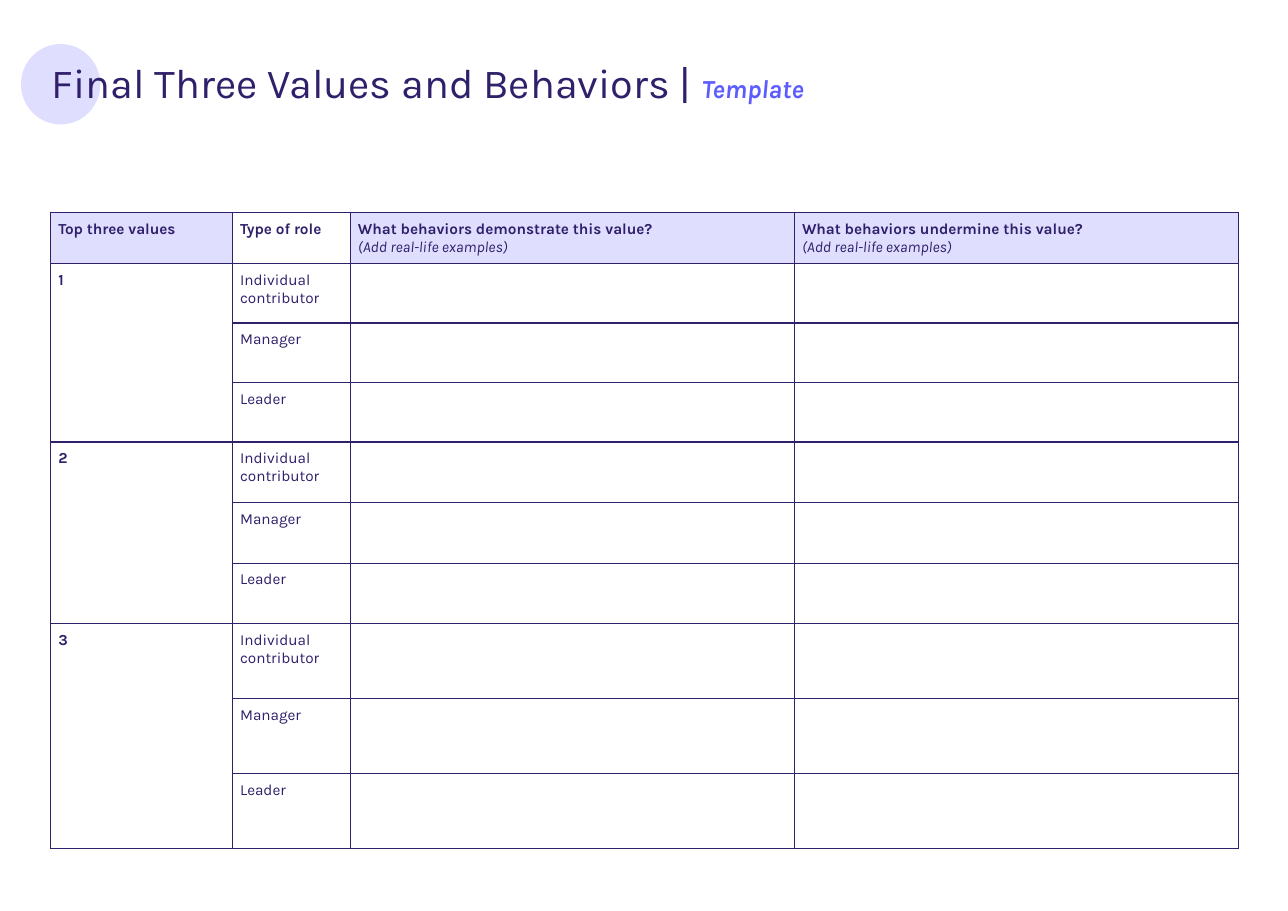
"""Build the values and behaviors template slide."""
from lxml import etree
from pptx import Presentation
from pptx.dml.color import RGBColor
from pptx.enum import shapes, text
from pptx.oxml import ns
from pptx.util import Inches, Pt

NAVY, VIOLET, LILAC, WHITE = "30206B", "5D5CFF", "DFDEFF", "FFFFFF"
TITLE = ("Final Three Values and Behaviors | ", "Template")
HINT = "(Add real-life examples)"
HEADERS = [
    ("Top three values", None, LILAC),
    ("Type of role", None, WHITE),
    ("What behaviors demonstrate this value?", HINT, LILAC),
    ("What behaviors undermine this value?", HINT, LILAC),
]
VALUES = [("1", 0.54), ("2", 0.55), ("3", 0.68)]
ROLES = ["Individual contributor", "Manager", "Leader"]
COLUMNS = [1.65, 1.07, 4.03, 4.03]
HEADER_HEIGHT = 0.46
LEFT, TOP, MARGIN = 0.46, 1.93, 0.07


def color(value):
    return RGBColor.from_string(value)


def write(p, content, size=10, fill=NAVY, bold=False, italic=False):
    r = p.add_run()
    r.text = content
    r.font.name, r.font.size = "Karla", Pt(size)
    r.font.bold, r.font.italic = bold, italic
    r.font.color.rgb = color(fill)


def add_border(cell, width=1):
    tcPr = cell._tc.get_or_add_tcPr()
    for side in ("lnL", "lnR", "lnT", "lnB"):
        ln = etree.SubElement(tcPr, ns.qn(f"a:{side}"), w=str(Pt(width)))
        solid = etree.SubElement(ln, ns.qn("a:solidFill"))
        etree.SubElement(solid, ns.qn("a:srgbClr"), val=NAVY)


def add_title(s):
    sp = s.shapes.title
    sp.left, sp.top, sp.width, sp.height = map(Inches, (0.47, 0.57, 9.1, 0.84))
    tf = sp.text_frame
    tf.margin_left = tf.margin_right = tf.margin_top = tf.margin_bottom = 0
    tf.vertical_anchor = text.MSO_ANCHOR.TOP
    tf.auto_size = text.MSO_AUTO_SIZE.NONE
    p = tf.paragraphs[0]
    p.alignment, p.line_spacing = text.PP_ALIGN.LEFT, 0.9
    write(p, TITLE[0], size=27)
    write(p, TITLE[1], size=17, fill=VIOLET, bold=True, italic=True)

    circle = s.shapes.add_shape(
        shapes.MSO_SHAPE.OVAL, *map(Inches, (0.19, 0.4, 0.72, 0.73)))
    circle.shadow.inherit = False
    circle.fill.solid()
    circle.fill.fore_color.rgb = color(LILAC)
    circle.line.fill.background()
    sp.element.addprevious(circle.element)


def add_values_table(s):
    heights = [HEADER_HEIGHT] + [h for _, h in VALUES for _ in ROLES]
    table = s.shapes.add_table(
        len(heights), len(COLUMNS), Inches(LEFT), Inches(TOP),
        Inches(sum(COLUMNS)), Inches(sum(heights))).table
    table.first_row = table.horz_banding = False
    for column, width in zip(table.columns, COLUMNS):
        column.width = Inches(width)
    for row, height in zip(table.rows, heights):
        row.height = Inches(height)
    for cell in table.iter_cells():
        cell.margin_left = cell.margin_right = Inches(MARGIN)
        cell.margin_top = cell.margin_bottom = Inches(MARGIN)
        add_border(cell)
        cell.fill.background()

    for i, (heading, hint, fill) in enumerate(HEADERS):
        cell = table.cell(0, i)
        cell.fill.solid()
        cell.fill.fore_color.rgb = color(fill)
        write(cell.text_frame.paragraphs[0], heading, bold=True)
        if hint:
            write(cell.text_frame.add_paragraph(), hint, italic=True)

    for i, (value, _) in enumerate(VALUES):
        first = 1 + i * len(ROLES)
        cell = table.cell(first, 0)
        cell.merge(table.cell(first + len(ROLES) - 1, 0))
        write(cell.text_frame.paragraphs[0], value, bold=True)
        for j, role in enumerate(ROLES):
            write(table.cell(first + j, 1).text_frame.paragraphs[0], role)


def main():
    prs = Presentation()
    prs.slide_width, prs.slide_height = Inches(11.69), Inches(8.27)
    s = prs.slides.add_slide(prs.slide_layouts[5])
    add_title(s)
    add_values_table(s)
    prs.save("out.pptx")


if __name__ == "__main__":
    main()
